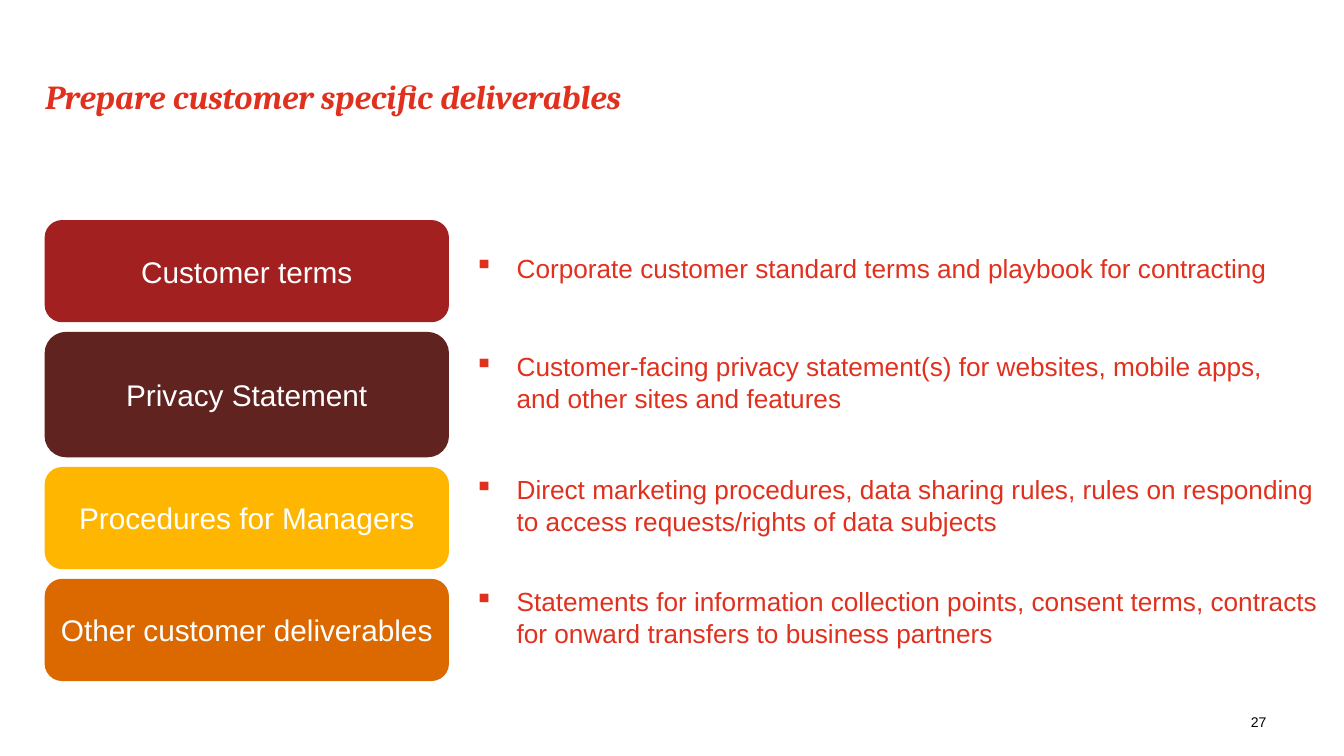
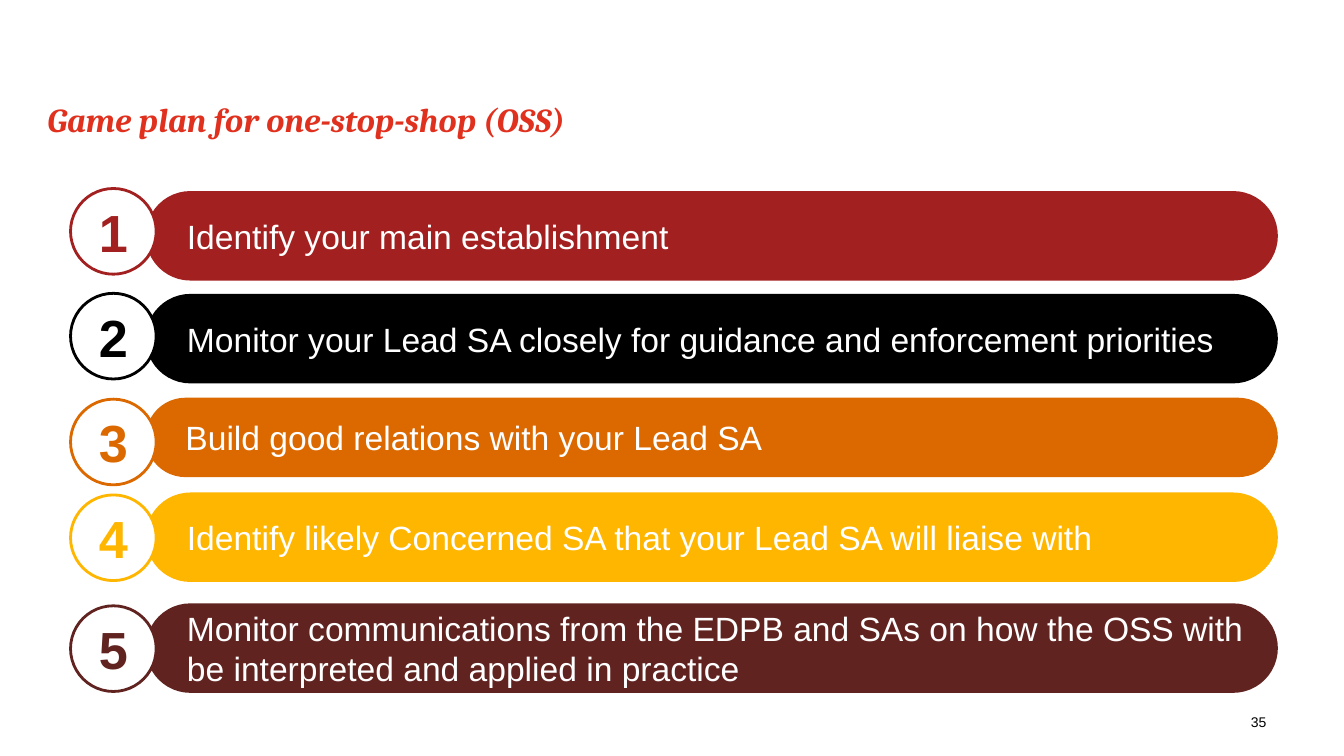
"""Builds two slides: customer deliverables and the one-stop-shop game plan."""
import pptx
import pptx.util
import pptx.dml.color
import pptx.enum.shapes
import pptx.enum.text
import pptx.oxml
import pptx.oxml.ns
import lxml.etree

Inches = pptx.util.Inches
Align = pptx.enum.text.PP_ALIGN
Anchor = pptx.enum.text.MSO_ANCHOR
Kind = pptx.enum.shapes.MSO_SHAPE


class Theme:
    red = "E0301E"
    crimson = "A32020"
    maroon = "602320"
    yellow = "FFB600"
    orange = "DC6900"
    black = "000000"
    white = "FFFFFF"
    head = "Cambria"
    body = "Arial"
    title = 24
    label = 21.3
    note = 18.7
    step = 24
    digit = 37.3
    foot = 10


def write(shape, text, size, color, font=Theme.body, bold=False, italic=False,
          align=Align.LEFT, anchor=Anchor.TOP, inset=(0, 0, 0, 0), bullet=None):
    frame = shape.text_frame
    frame.word_wrap = True
    frame.vertical_anchor = anchor
    (frame.margin_left, frame.margin_top,
     frame.margin_right, frame.margin_bottom) = map(Inches, inset)
    para = frame.paragraphs[0]
    para.text = text
    para.alignment = align
    for run in para.runs:
        run.font.name = font
        run.font.size = pptx.util.Pt(size)
        run.font.bold = bold
        run.font.italic = italic
        run.font.color.rgb = pptx.dml.color.RGBColor.from_string(color)
    if bullet:
        props = para._p.get_or_add_pPr()
        props.set("marL", str(Inches(0.42)))
        props.set("indent", str(-Inches(0.42)))
        tint = lxml.etree.SubElement(props, pptx.oxml.ns.qn("a:buClr"))
        lxml.etree.SubElement(tint, pptx.oxml.ns.qn("a:srgbClr"), val=color)
        lxml.etree.SubElement(props, pptx.oxml.ns.qn("a:buChar"), char=bullet)


def block(shapes, kind, box, fill, line, width):
    shape = shapes.add_shape(kind, *map(Inches, box))
    shape.shadow.inherit = False
    shape.fill.solid()
    shape.fill.fore_color.rgb = pptx.dml.color.RGBColor.from_string(fill)
    shape.line.color.rgb = pptx.dml.color.RGBColor.from_string(line)
    shape.line.width = pptx.util.Pt(width)
    return shape


deck = pptx.Presentation()
deck.slide_width = Inches(13.34)
deck.slide_height = Inches(7.5)

pages = [
    ("Prepare customer specific deliverables", 0.45, 0.75, "27"),
    ("Game plan for one-stop-shop (OSS)", 0.47, 0.98, "35"),
]
slides = []
for title, left, top, number in pages:
    slide = deck.slides.add_slide(deck.slide_layouts[6])
    head = slide.shapes.add_textbox(Inches(left), Inches(top), Inches(12.1), Inches(0.77))
    write(head, title, Theme.title, Theme.red, font=Theme.head, bold=True, italic=True)
    foot = slide.shapes.add_textbox(Inches(10.34), Inches(7.08), Inches(2.23), Inches(0.17))
    write(foot, number, Theme.foot, Theme.black, align=Align.RIGHT)
    slides.append(slide)
goods, plan = slides

rows = [
    ("Customer terms", Theme.crimson, 1, 2.45, 0.42,
     "Corporate customer standard terms and playbook for contracting"),
    ("Privacy Statement", Theme.maroon, 1.23, 3.43, 0.73,
     "Customer-facing privacy statement(s) for websites, mobile apps,\v"
     "and other sites and features"),
    ("Procedures for Managers", Theme.yellow, 1, 4.65, 0.73,
     "Direct marketing procedures, data sharing rules, rules on responding\v"
     "to access requests/rights of data subjects"),
    ("Other customer deliverables", Theme.orange, 1, 5.76, 0.73,
     "Statements for information collection points, consent terms, contracts\v"
     "for onward transfers to business partners"),
]
top, gap = 2.19, 0.11
for label, color, height, level, depth, text in rows:
    card = block(goods.shapes, Kind.ROUNDED_RECTANGLE, (0.45, top, 4, height), color, color, 1)
    write(card, label, Theme.label, Theme.white, align=Align.CENTER,
          anchor=Anchor.MIDDLE, inset=(0.1, 0.1, 0.1, 0.1))
    note = goods.shapes.add_textbox(Inches(4.61), Inches(level), Inches(8.7), Inches(depth))
    write(note, text, Theme.note, Theme.red, inset=(0.1, 0.05, 0, 0.05), bullet="▪")
    top += height + gap

steps = [
    ("Identify your main establishment", Theme.crimson, 1.91, 0.86, 1.87),
    ("Monitor your Lead SA closely for guidance and enforcement priorities",
     Theme.black, 2.93, 0.86, 2.91),
    ("Build good relations with your Lead SA", Theme.orange, 3.96, 0.76, 3.96),
    ("Identify likely Concerned SA that your Lead SA will liaise with",
     Theme.yellow, 4.9, 0.86, 4.91),
    ("Monitor communications from the EDPB and SAs on how the OSS with "
     "be interpreted and applied in practice", Theme.maroon, 6, 0.86, 6.01),
]
for count, (text, color, top, height, level) in enumerate(steps, 1):
    group = plan.shapes.add_group_shape()
    bar = block(group.shapes, Kind.ROUNDED_RECTANGLE, (1.46, top, 11.21, height), color, color, 2)
    bar.adjustments[0] = 0.5
    write(bar, text, Theme.step, Theme.white, anchor=Anchor.MIDDLE,
          inset=(0.27, 0.05, 0.1, 0.05))
    disc = block(group.shapes, Kind.OVAL, (0.7, level, 0.85, 0.85), Theme.white, color, 2)
    write(disc, str(count), Theme.digit, color, bold=True, align=Align.CENTER,
          anchor=Anchor.MIDDLE, inset=(0.1, 0.05, 0.1, 0.05))

deck.save("out.pptx")
